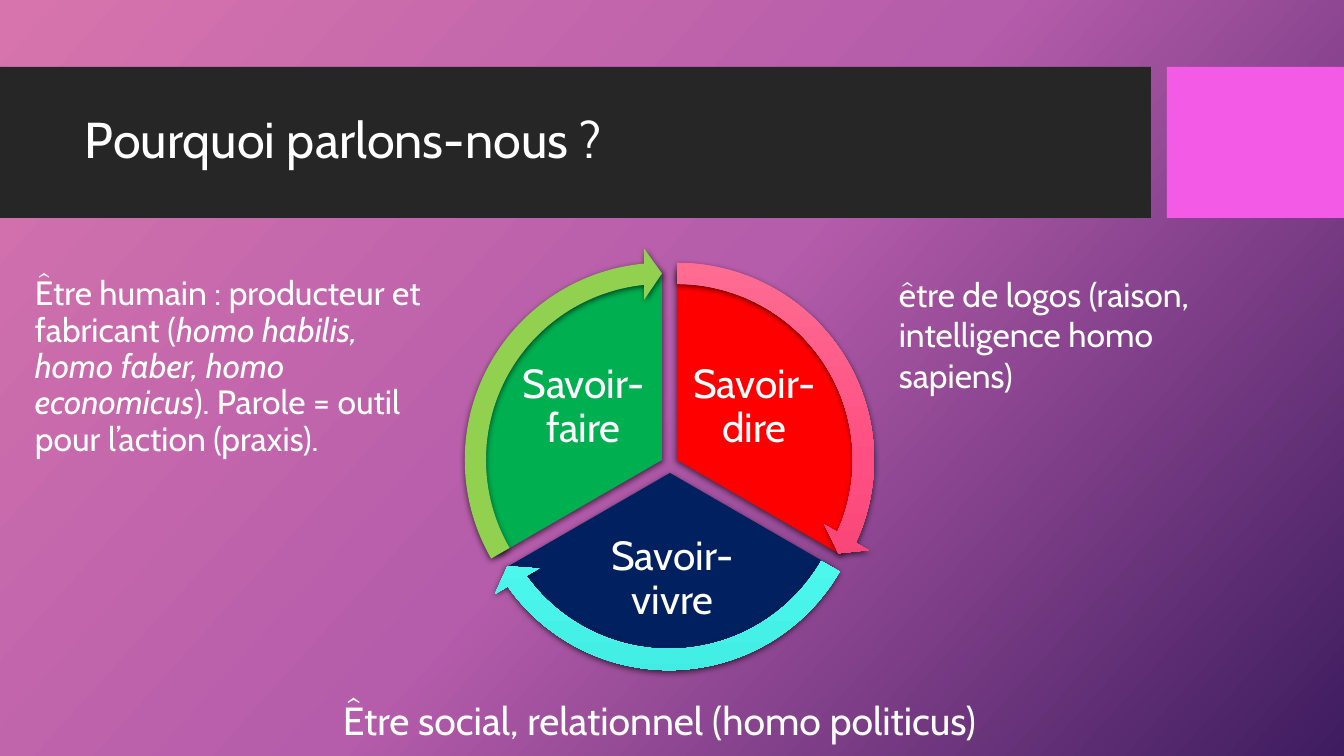
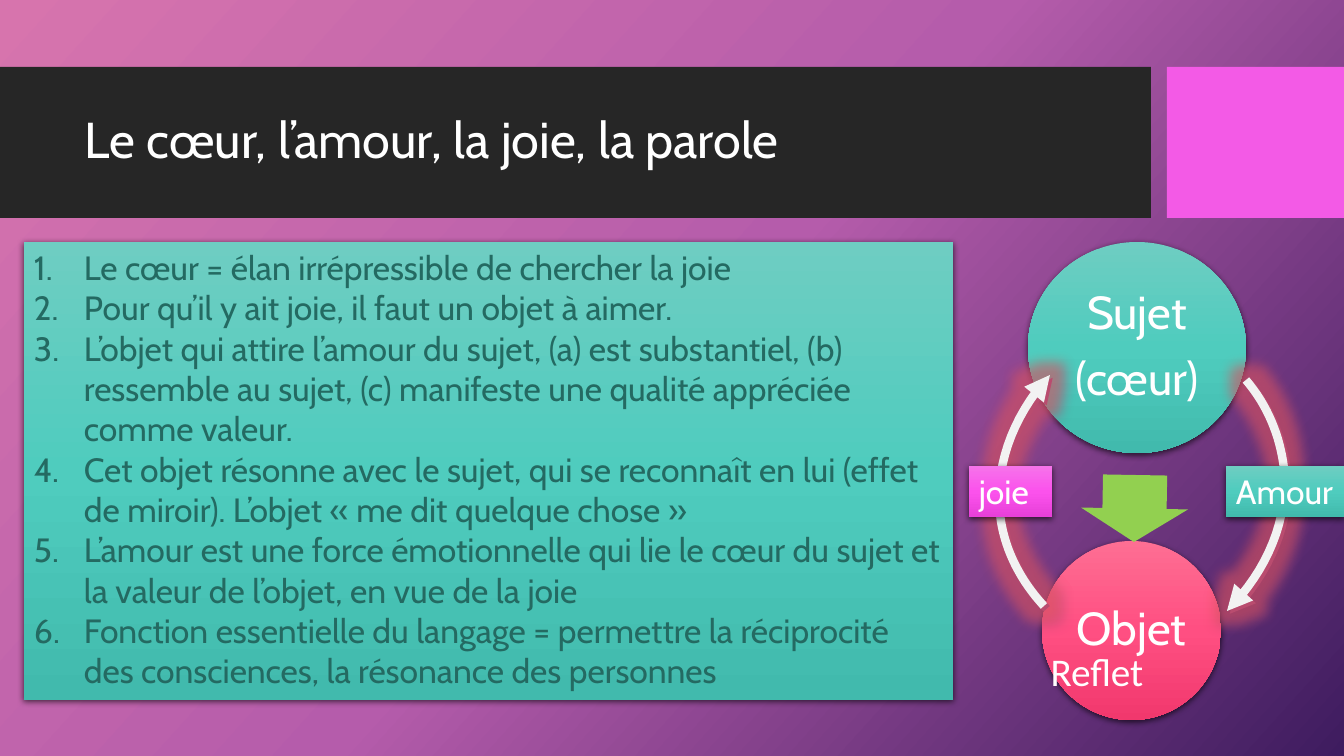
from lxml import etree
from pptx import Presentation
from pptx import util as u
from pptx.dml.color import RGBColor
from pptx.enum import shapes, text
from pptx.oxml import ns

# Shared scale, font, colours
PX = 12192000 / 1344
FONT = "Cabin"
WHITE, GREEN = "FFFFFF", "92D050"
BAND, ACCENT, LIST_TEXT = "262626", "F35AE6", "246A62"
BACKGROUND = ("D774AD", "B55CAB", "3E1C5F")
ROSE = ("FE6E93", "FF4F82", "F1386D")
TEAL = ("6ECDC2", "4FCCBE", "41BAAD")
CYAN = ("74FCF3", "55FFF4", "41EDE3")
PINK = ("F673EA", "FB52EC", "E840D9")
SHAPE = shapes.MSO_SHAPE
CENTER = text.PP_ALIGN.CENTER
MIDDLE = text.MSO_ANCHOR.MIDDLE


def px(*lengths):
    return [u.Emu(round(length * PX)) for length in lengths]


def color(value):
    return RGBColor.from_string(value)


def add_xml(parent, tag, **attributes):
    child = etree.SubElement(parent, ns.qn(tag))
    for name, value in attributes.items():
        child.set(name, str(value))
    return child


def paint_gradient(fill, element, colors, angle):
    """Fill with evenly spaced colour stops."""
    fill.gradient()
    gradient = element.find(".//" + ns.qn("a:gradFill"))
    for child in list(gradient):
        gradient.remove(child)
    stops = add_xml(gradient, "a:gsLst")
    for index, value in enumerate(colors):
        stop = add_xml(stops, "a:gs", pos=index * 100000 // (len(colors) - 1))
        add_xml(stop, "a:srgbClr", val=value)
    add_xml(gradient, "a:lin", ang=angle * 60000, scaled=0)


def add_effect(shape, tag, value, alpha, **attributes):
    effects = shape._element.spPr.find(ns.qn("a:effectLst"))
    tint = add_xml(add_xml(effects, tag, **attributes), "a:srgbClr", val=value)
    add_xml(tint, "a:alpha", val=alpha * 1000)


def add_shadow(shape, value="000000", alpha=63, blur=4.5, distance=1.5, angle=90):
    add_effect(shape, "a:outerShdw", value, alpha, blurRad=u.Pt(blur),
               dist=u.Pt(distance), dir=angle * 60000, algn="ctr", rotWithShape=0)


def add_figure(page, kind, at, fill, adjust=(), shadow=True):
    """Preset shape without outline; fill is a colour or a tuple of stops."""
    shape = page.shapes.add_shape(kind, *px(*at))
    shape.shadow.inherit = False
    for index, value in enumerate(adjust):
        shape.adjustments[index] = value
    if isinstance(fill, tuple):
        paint_gradient(shape.fill, shape._element, fill, 90)
    else:
        shape.fill.solid()
        shape.fill.fore_color.rgb = color(fill)
    shape.line.fill.background()
    if shadow:
        add_shadow(shape)
    return shape


def write(shape, paragraphs, size, value=WHITE, font=FONT, align=text.PP_ALIGN.LEFT,
          anchor=text.MSO_ANCHOR.TOP, spacing=1.0, gap=0, inset=None, numbered=False):
    """Each paragraph is a string or a list of (string, italic) runs."""
    frame = shape.text_frame
    frame.word_wrap = True
    frame.vertical_anchor = anchor
    if inset is not None:
        frame.margin_left, frame.margin_top, frame.margin_right, frame.margin_bottom = px(*[inset] * 4)
    for index, runs in enumerate(paragraphs):
        para = frame.add_paragraph() if index else frame.paragraphs[0]
        para.alignment, para.line_spacing = align, spacing
        para.space_after = u.Pt(gap)
        if numbered:
            properties = para._p.get_or_add_pPr()
            indent = px(50)[0]
            properties.set("marL", str(indent))
            properties.set("indent", str(-indent))
            add_xml(properties, "a:buFont", typeface="+mj-lt")
            add_xml(properties, "a:buAutoNum", type="arabicPeriod")
        for content, italic in [(runs, False)] if isinstance(runs, str) else runs:
            span = para.add_run()
            span.text = content
            span.font.size, span.font.name = u.Pt(size), font
            span.font.italic = italic
            span.font.color.rgb = color(value)


def add_text(page, at, paragraphs, size, **style):
    write(page.shapes.add_textbox(*px(*at)), paragraphs, size, **style)


def add_label(page, at, fill, label):
    write(add_figure(page, SHAPE.RECTANGLE, at, fill), [label], 24)


def add_circle(page, at, fill, lines):
    write(add_figure(page, SHAPE.OVAL, at, fill), lines, 33, align=CENTER,
          anchor=MIDDLE, spacing=0.9, gap=12, inset=5)


def curve_points(controls, steps=16):
    """Points along joined cubic curves, in EMU."""
    points = [px(*controls[0])]
    for start in range(0, len(controls) - 1, 3):
        for step in range(1, steps + 1):
            t = step / steps
            weights = ((1 - t) ** 3, 3 * t * (1 - t) ** 2, 3 * t * t * (1 - t), t ** 3)
            section = controls[start:start + 4]
            points.append(px(*[sum(w * point[axis] for w, point in zip(weights, section))
                               for axis in (0, 1)]))
    return points


def add_curved_arrow(page, controls):
    first, *others = curve_points(controls)
    builder = page.shapes.build_freeform(*first, scale=1.0)
    builder.add_line_segments(others, close=False)
    arrow = builder.convert_to_shape()
    arrow.shadow.inherit = False
    arrow.fill.background()
    arrow.line.color.rgb = color("F2F2F2")
    arrow.line.width = u.Pt(6)
    add_xml(arrow.line._get_or_add_ln(), "a:tailEnd", type="triangle")
    add_effect(arrow, "a:glow", "FF5A4F", 40, rad=u.Pt(18))
    add_shadow(arrow, "8D4585", 100, 0, 2.8, 45)


def add_page(deck, title):
    """Blank page with the shared background, bands and title."""
    page = deck.slides.add_slide(deck.slide_layouts[6])
    paint_gradient(page.background.fill, page._element, BACKGROUND, 42)
    add_figure(page, SHAPE.RECTANGLE, (0, 67, 1151, 151), BAND, shadow=False)
    add_figure(page, SHAPE.RECTANGLE, (1167, 67, 177, 151), ACCENT, shadow=False)
    add_text(page, (75, 83, 1059, 119), [title], 36, anchor=MIDDLE, spacing=0.9)
    return page


def add_cycle(page):
    """Three sectors, their labels and the arrows around them."""
    sectors = [
        ((488, 271), (162, 18), "FF0000", (687, 351, 135, 113), "Savoir-dire"),
        ((481, 284), (18, 90), "002060", (571, 530, 203, 99), "Savoir-vivre"),
        ((473, 271), (90, 162), "00B050", (516, 351, 135, 113), "Savoir-faire"),
    ]
    for corner, angles, fill, label_at, label in sectors:
        add_figure(page, SHAPE.PIE, (*corner, 378, 378), fill, angles)
        add_text(page, label_at, [label], 29, align=CENTER, anchor=MIDDLE,
                 spacing=0.9, inset=4)
    arrows = [
        ((465, 248), ROSE, 14.73, 161.99),
        ((457, 261), CYAN, 86.72, 18),
        ((450, 248), GREEN, 158.73, 90),
    ]
    for corner, fill, end, start in arrows:
        add_figure(page, SHAPE.CIRCULAR_ARROW, (*corner, 424, 424), fill,
                   (0.05, 3.28, end, start, 0.06))


def build_speech_page(deck):
    page = add_page(deck, "Pourquoi parlons-nous ?")
    maker = [("Être humain : producteur et fabricant (", False),
             ("homo habilis, homo faber, homo economicus", True),
             ("). Parole = outil pour l’action (praxis).", False)]
    add_text(page, (25, 272, 428, 277), [maker], 24, spacing=0.9)
    add_cycle(page)
    add_text(page, (889, 269, 376, 132),
             ["être de logos (raison, intelligence homo sapiens)"], 24)
    add_text(page, (333, 691, 727, 57), ["Être social, relationnel (homo politicus)"], 28)


def build_heart_page(deck):
    page = add_page(deck, "Le cœur, l’amour, la joie, la parole")
    # Subject and object
    add_circle(page, (1042, 541, 179, 179), ROSE, ["Objet"])
    down = add_figure(page, SHAPE.RIGHT_ARROW, (1101, 455, 67, 107), GREEN,
                      (0.6, 0.5), shadow=False)
    down.rotation = 91
    add_circle(page, (1028, 242, 218, 211), TEAL, ["Sujet", "(cœur)"])
    # Numbered theses
    theses = [
        "Le cœur = élan irrépressible de chercher la joie",
        "Pour qu’il y ait joie, il faut un objet à aimer.",
        "L’objet qui attire l’amour du sujet, (a) est substantiel, (b) ressemble au sujet, "
        "(c) manifeste une qualité appréciée comme valeur.",
        "Cet objet résonne avec le sujet, qui se reconnaît en lui (effet de miroir). "
        "L’objet « me dit quelque chose »",
        "L’amour est une force émotionnelle qui lie le cœur du sujet et la valeur de l’objet, "
        "en vue de la joie",
        "Fonction essentielle du langage = permettre la réciprocité des consciences, "
        "la résonance des personnes",
    ]
    panel = add_figure(page, SHAPE.RECTANGLE, (24, 242, 929, 458), TEAL)
    write(panel, theses, 24, value=LIST_TEXT, numbered=True)
    # Loop of love and joy
    add_curved_arrow(page, [(1246, 380), (1268, 406), (1280, 436), (1284, 468),
                            (1289, 518), (1268, 570), (1227, 611)])
    add_label(page, (1226, 466, 118, 51), TEAL, "Amour")
    add_text(page, (1002, 642, 190, 57), ["Reflet"], 28, font="Calibri", align=CENTER)
    add_curved_arrow(page, [(1044, 606), (1021, 581), (1006, 552), (1001, 521),
                            (993, 471), (1011, 418), (1050, 375)])
    add_label(page, (969, 466, 83, 51), PINK, "joie")


def main():
    deck = Presentation()
    deck.slide_width, deck.slide_height = px(1344, 756)
    build_speech_page(deck)
    build_heart_page(deck)
    deck.save("out.pptx")


if __name__ == "__main__":
    main()
